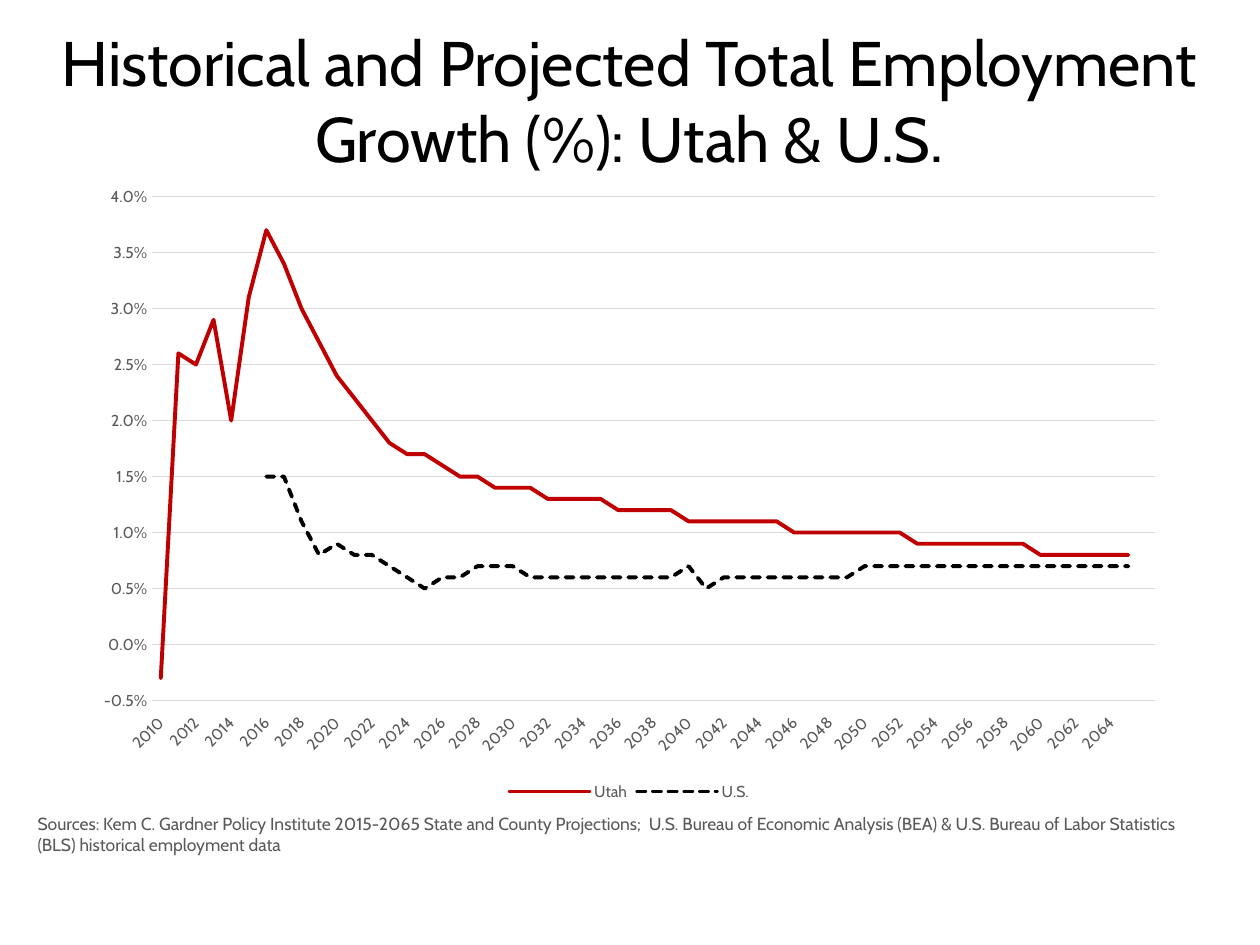
"""Build a slide charting total employment growth in Utah and the U.S."""
from dataclasses import dataclass
from typing import Optional

import pptx
import pptx.chart.data
import pptx.dml.color
import pptx.enum.chart
import pptx.enum.dml
import pptx.enum.text
import pptx.oxml
import pptx.oxml.ns
import pptx.util

Inches = pptx.util.Inches
Pt = pptx.util.Pt
RGBColor = pptx.dml.color.RGBColor
qn = pptx.oxml.ns.qn

FONT = "Cabin"
BLACK = RGBColor(0x00, 0x00, 0x00)
RED = RGBColor(0xC0, 0x00, 0x00)
GRAY = RGBColor(0x59, 0x59, 0x59)
PALE_GRAY = RGBColor(0xD9, 0xD9, 0xD9)
FIRST_YEAR, LAST_YEAR = 2010, 2065


@dataclass(frozen=True)
class Caption:
    text: str
    left: float
    top: float
    width: float
    height: float
    size: int
    color: RGBColor
    align: pptx.enum.text.PP_ALIGN


@dataclass(frozen=True)
class Region:
    name: str
    start: int
    growth: tuple[float, ...]
    color: RGBColor
    dash: pptx.enum.dml.MSO_LINE

    def values(self) -> list[Optional[float]]:
        return [None] * (self.start - FIRST_YEAR) + list(self.growth) + [None]


CAPTIONS = (
    Caption("Historical and Projected Total Employment Growth (%): Utah & U.S.",
            0.3, 0.14, 9.39, 1.31, 36, BLACK, pptx.enum.text.PP_ALIGN.CENTER),
    Caption("Sources: Kem C. Gardner Policy Institute 2015-2065 State and County Projections;  "
            "U.S. Bureau of Economic Analysis (BEA) & U.S. Bureau of Labor Statistics (BLS) "
            "historical employment data",
            0.2, 6.4, 9.23, 0.44, 10, GRAY, pptx.enum.text.PP_ALIGN.LEFT),
)
REGIONS = (
    Region("Utah", 2010,
           (-0.3, 2.6, 2.5, 2.9, 2.0, 3.1, 3.7, 3.4, 3.0, 2.7, 2.4, 2.2, 2.0, 1.8,
            1.7, 1.7, 1.6, 1.5, 1.5, 1.4, 1.4, 1.4) + (1.3,) * 4 + (1.2,) * 4
           + (1.1,) * 6 + (1.0,) * 7 + (0.9,) * 7 + (0.8,) * 6,
           RED, pptx.enum.dml.MSO_LINE.SOLID),
    Region("U.S.", 2016,
           (1.5, 1.5, 1.1, 0.8, 0.9, 0.8, 0.8, 0.7, 0.6, 0.5, 0.6, 0.6, 0.7, 0.7, 0.7)
           + (0.6,) * 9 + (0.7, 0.5) + (0.6,) * 8 + (0.7,) * 16,
           BLACK, pptx.enum.dml.MSO_LINE.SQUARE_DOT),
)
PLOT_LAYOUT = {"x": 0.064, "y": 0.036, "w": 0.916, "h": 0.797}


def style_font(font, size: int, color: RGBColor) -> None:
    font.name = FONT
    font.size = Pt(size)
    font.color.rgb = color


def add_caption(slide, caption: Caption) -> None:
    frame = slide.shapes.add_textbox(
        Inches(caption.left), Inches(caption.top),
        Inches(caption.width), Inches(caption.height)).text_frame
    frame.word_wrap = True
    frame.auto_size = pptx.enum.text.MSO_AUTO_SIZE.SHAPE_TO_FIT_TEXT
    paragraph = frame.paragraphs[0]
    paragraph.alignment = caption.align
    run = paragraph.add_run()
    run.text = caption.text
    style_font(run.font, caption.size, caption.color)


def place_plot(chart) -> None:
    plot_area = chart._chartSpace.find(".//" + qn("c:plotArea"))
    for layout in plot_area.findall(qn("c:layout")):
        plot_area.remove(layout)
    settings = '<c:layoutTarget val="inner"/><c:xMode val="edge"/><c:yMode val="edge"/>'
    settings += "".join(f'<c:{key} val="{share}"/>' for key, share in PLOT_LAYOUT.items())
    plot_area.insert(0, pptx.oxml.parse_xml(
        f'<c:layout {pptx.oxml.ns.nsdecls("c")}>'
        f"<c:manualLayout>{settings}</c:manualLayout></c:layout>"))


def style_axes(chart) -> None:
    years, growth = chart.category_axis, chart.value_axis
    for axis in (years, growth):
        axis.major_tick_mark = pptx.enum.chart.XL_TICK_MARK.NONE
        axis.minor_tick_mark = pptx.enum.chart.XL_TICK_MARK.NONE
        style_font(axis.tick_labels.font, 9, GRAY)
    growth.minimum_scale, growth.maximum_scale, growth.major_unit = -0.5, 4, 0.5
    growth.tick_labels.number_format = "0.0\\%"
    growth.tick_labels.number_format_is_linked = False
    growth.format.line.fill.background()
    years.tick_label_position = pptx.enum.chart.XL_TICK_LABEL_POSITION.LOW
    years._element.find(".//" + qn("a:bodyPr")).set("rot", "-2700000")
    for line in (years.format.line, growth.major_gridlines.format.line):
        line.color.rgb = PALE_GRAY
        line.width = Pt(0.75)


def style_region(series, region: Region) -> None:
    series.smooth = False
    series.marker.style = pptx.enum.chart.XL_MARKER_STYLE.NONE
    line = series.format.line
    line.color.rgb = region.color
    line.width = Pt(2.25)
    line.dash_style = region.dash
    for outline in series._element.iter(qn("a:ln")):
        outline.set("cap", "rnd")


def add_growth_chart(slide) -> None:
    growth_data = pptx.chart.data.CategoryChartData(number_format="0.0")
    growth_data.categories = [str(year) for year in range(FIRST_YEAR, LAST_YEAR + 1)] + [""]
    for region in REGIONS:
        growth_data.add_series(region.name, region.values())
    chart = slide.shapes.add_chart(
        pptx.enum.chart.XL_CHART_TYPE.LINE, Inches(0.65), Inches(1.38),
        Inches(8.69), Inches(5.02), growth_data).chart
    style_font(chart.font, 10, BLACK)
    chart.has_title = False
    chart.has_legend = True
    chart.legend.position = pptx.enum.chart.XL_LEGEND_POSITION.BOTTOM
    chart.legend.include_in_layout = False
    style_font(chart.legend.font, 9, GRAY)
    chart.plots[0].vary_by_categories = False
    style_axes(chart)
    place_plot(chart)
    for series, region in zip(chart.plots[0].series, REGIONS):
        style_region(series, region)


def main() -> None:
    deck = pptx.Presentation()
    deck.slide_width, deck.slide_height = Inches(10), Inches(7.5)
    slide = deck.slides.add_slide(deck.slide_layouts[6])
    for caption in CAPTIONS:
        add_caption(slide, caption)
    add_growth_chart(slide)
    deck.save("out.pptx")


if __name__ == "__main__":
    main()
